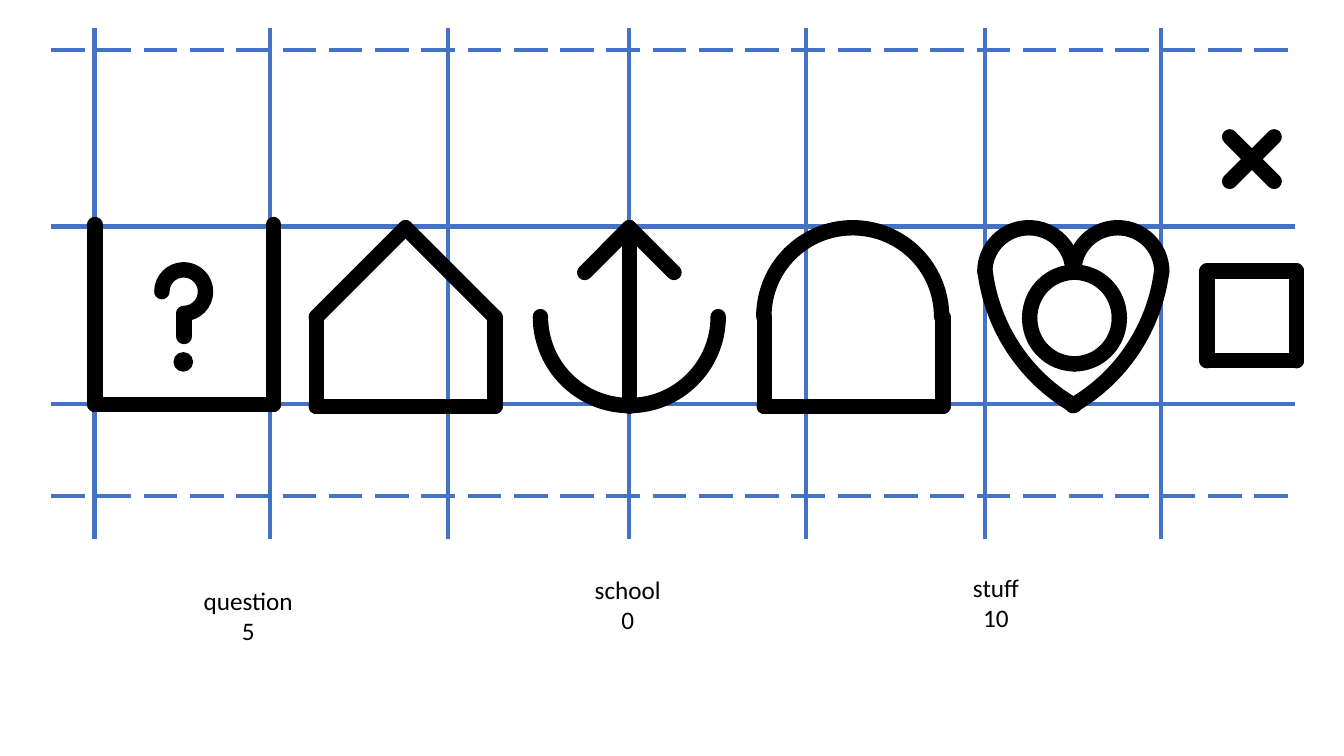
from dataclasses import dataclass
from math import ceil, cos, radians, sin, tan

from lxml.etree import SubElement
from pptx import Presentation
from pptx.dml.color import RGBColor
from pptx.enum.dml import MSO_LINE
from pptx.enum.shapes import MSO_CONNECTOR, MSO_SHAPE
from pptx.enum.text import MSO_AUTO_SIZE, PP_ALIGN
from pptx.oxml.ns import qn
from pptx.util import Cm, Pt


@dataclass(frozen=True)
class Theme:
    guide: RGBColor = RGBColor(0x44, 0x72, 0xC4)
    ink: RGBColor = RGBColor(0, 0, 0)
    font: str = "Calibri"
    text_size: Pt = Pt(18)
    guide_width: Pt = Pt(3)
    stroke_width: Pt = Pt(11)
    dot_width: Pt = Pt(1)


THEME = Theme()
GUIDE_ROWS = ((5.71, None), (1.25, MSO_LINE.LONG_DASH),
              (10.19, None), (12.5, MSO_LINE.LONG_DASH))
GUIDE_COLUMNS = (2.38, 6.81, 11.28, 15.85, 20.32, 24.82, 29.26)
LABELS = (("school", "0", 14.73, 14.35, 2.18),
          ("stuff", "10", 24.25, 14.3, 1.7),
          ("question", "5", 4.86, 14.63, 2.79))
SIGN_TOP, SIGN_MIDDLE, SIGN_BOTTOM = 5.74, 7.99, 10.24
HALF_SIGN = 2.25
THINNEST = Pt(1)


def add_guide(slide, start, end, dash=None):
    """Draw a guide line on the layout, behind the slide's own shapes."""
    guide = slide.shapes.add_connector(MSO_CONNECTOR.STRAIGHT, *map(Cm, start + end))
    guide.line.color.rgb = THEME.guide
    for name, value in {"width": THEME.guide_width, "dash_style": dash}.items():
        setattr(guide.line, name, value)
    SubElement(guide._element.spPr, qn("a:effectLst"))
    slide.slide_layout.shapes._spTree.append(guide._element)


def format_stroke(shape):
    shape.shadow.inherit = False
    shape.fill.background()
    shape.line.color.rgb = THEME.ink
    shape.line.width = THEME.stroke_width
    line = shape.line._get_or_add_ln()
    line.set("cap", "rnd")
    SubElement(line, qn("a:round"))


def add_path(shapes, points):
    corners = [(Cm(x), Cm(y)) for x, y in points]
    builder = shapes.build_freeform(*corners[0])
    builder.add_line_segments(corners[1:], close=False)
    shape = builder.convert_to_shape()
    format_stroke(shape)
    path = shape._element.find(".//" + qn("a:path"))
    for name, key in {"width": "w", "height": "h"}.items():
        length = max(getattr(shape, name), THINNEST)
        setattr(shape, name, length)
        path.set(key, str(int(length)))
    return path


def add_bars(shapes, *corners):
    """Join neighbouring corners with separate straight strokes."""
    for start, end in zip(corners, corners[1:]):
        add_path(shapes, (start, end))


def add_curve(shapes, center_x, center_y, radius, start, end):
    """Add a circular stroke; degrees run clockwise from the right."""
    pieces = ceil(abs(end - start) / 90)
    sweep = radians(end - start) / pieces
    reach = 4 / 3 * tan(sweep / 4)

    def place(angle, pull):
        return (center_x + radius * (cos(angle) - pull * sin(angle)),
                center_y + radius * (sin(angle) + pull * cos(angle)))

    points = [place(radians(start), 0)]
    for piece in range(pieces):
        first = radians(start) + piece * sweep
        last = first + sweep
        points += [place(first, reach), place(last, -reach), place(last, 0)]

    path = add_path(shapes, points)
    segments = list(path)[1:]
    for index in range(0, len(segments), 3):
        curve = SubElement(path, qn("a:cubicBezTo"))
        for segment in segments[index:index + 3]:
            curve.append(segment[0])
            path.remove(segment)


def add_ring(shapes, left, top, width, height):
    """Build a ring from four mirrored quarter arcs."""
    for flips in ((), ("flipV",), ("flipH",), ("flipH", "flipV")):
        quarter = shapes.add_shape(MSO_SHAPE.ARC, *map(Cm, (left, top, width, height)))
        quarter.adjustments[0], quarter.adjustments[1] = 161.66, 0.04
        format_stroke(quarter)
        for flip in flips:
            quarter._element.spPr.find(qn("a:xfrm")).set(flip, "1")


def add_dot(shapes, left, top, size):
    dot = shapes.add_shape(MSO_SHAPE.OVAL, Cm(left), Cm(top), Cm(size), Cm(size))
    dot.shadow.inherit = False
    dot.fill.solid()
    dot.fill.fore_color.rgb = THEME.ink
    dot.line.color.rgb = THEME.ink
    dot.line.width = THEME.dot_width


def add_label(shapes, word, number, left, top, width):
    frame = shapes.add_textbox(Cm(left), Cm(top), Cm(width), Cm(1.8)).text_frame
    frame.text = f"{word}\n{number}"
    frame.word_wrap = False
    frame.auto_size = MSO_AUTO_SIZE.SHAPE_TO_FIT_TEXT
    for paragraph in frame.paragraphs:
        paragraph.alignment = PP_ALIGN.CENTER
        for name, value in {"name": THEME.font, "size": THEME.text_size}.items():
            setattr(paragraph.font, name, value)
        paragraph.font.color.rgb = THEME.ink


def add_walls(shapes, center):
    left, right = center - HALF_SIGN, center + HALF_SIGN
    add_bars(shapes, (left, SIGN_MIDDLE), (left, SIGN_BOTTOM),
             (right, SIGN_BOTTOM), (right, SIGN_MIDDLE))


def add_house(shapes, center):
    add_walls(shapes, center)
    add_bars(shapes, (center - HALF_SIGN, SIGN_MIDDLE), (center, SIGN_TOP),
             (center + HALF_SIGN, SIGN_MIDDLE))


def add_anchor(shapes, center):
    barb = HALF_SIGN / 2
    add_curve(shapes, center, 7.98, 2.24, 180, 0)
    for side in (-barb, barb):
        add_bars(shapes, (center, SIGN_TOP), (center + side, SIGN_TOP + barb))
    add_bars(shapes, (center, SIGN_TOP), (center, SIGN_BOTTOM))


def add_arch(shapes, center):
    add_walls(shapes, center)
    add_curve(shapes, center - 0.02, 7.98, 2.24, 360, 180)


def add_cross(shapes):
    add_bars(shapes, (30.99, 3.45), (32.11, 4.57))
    add_bars(shapes, (32.11, 3.45), (30.99, 4.57))


def add_square(shapes):
    left, top, right, bottom = 30.42, 6.83, 32.67, 9.09
    add_bars(shapes, (left, top), (right, top), (right, bottom),
             (left, bottom), (left, top))


def add_heart(shapes, center):
    add_curve(shapes, center + 2.3, 6.27, 4.56, 172.7, 120)
    for side in (-1.12, 1.12):
        add_curve(shapes, center + side, 6.85, 1.11, 360, 180)
    add_curve(shapes, center - 2.3, 6.27, 4.56, 60, 7.3)


def add_question_box(shapes):
    add_bars(shapes, (2.39, 5.66), (2.39, 10.19), (6.89, 10.19), (6.89, 5.66))
    add_curve(shapes, 4.63, 7.35, 0.55, 90, -180)
    add_bars(shapes, (4.64, 7.92), (4.64, 8.48))
    add_dot(shapes, 4.39, 8.89, 0.46)


def main():
    presentation = Presentation()
    presentation.slide_width, presentation.slide_height = Cm(33.87), Cm(19.05)
    slide = presentation.slides.add_slide(presentation.slide_layouts[6])
    shapes = slide.shapes
    for y, dash in GUIDE_ROWS:
        add_guide(slide, (1.29, y), (32.64, y), dash)
    for x in GUIDE_COLUMNS:
        add_guide(slide, (x, 0.71), (x, 13.59))
    for label in LABELS:
        add_label(shapes, *label)

    school = shapes.add_group_shape().shapes
    add_house(school, 10.22)
    add_anchor(school, 15.86)
    add_arch(school, 21.51)

    stuff = shapes.add_group_shape().shapes
    add_cross(stuff)
    add_ring(stuff, 25.95, 6.86, 2.26, 2.31)
    add_square(stuff)
    add_heart(stuff, 27.05)

    add_question_box(shapes.add_group_shape().shapes)
    presentation.save("out.pptx")


if __name__ == "__main__":
    main()
